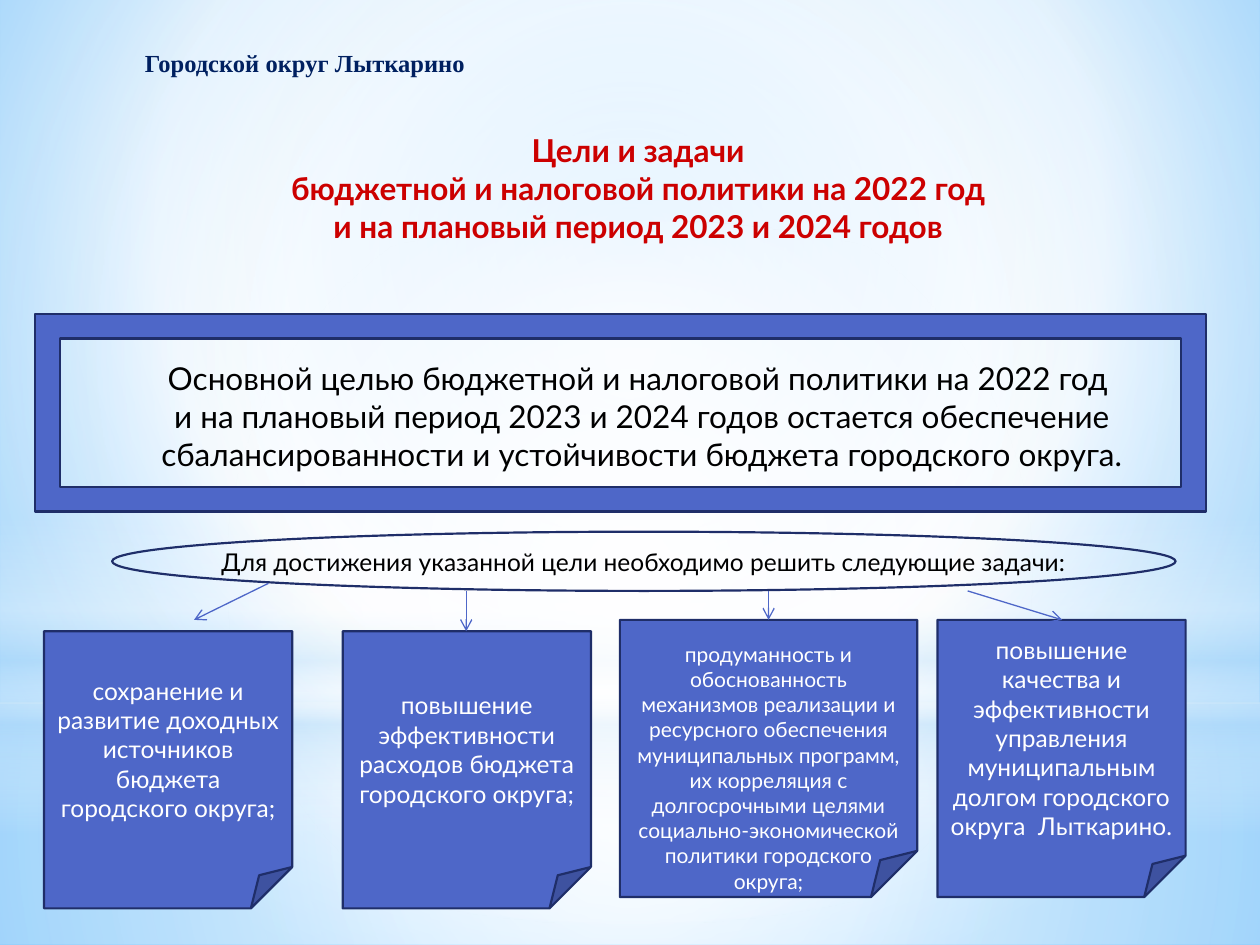
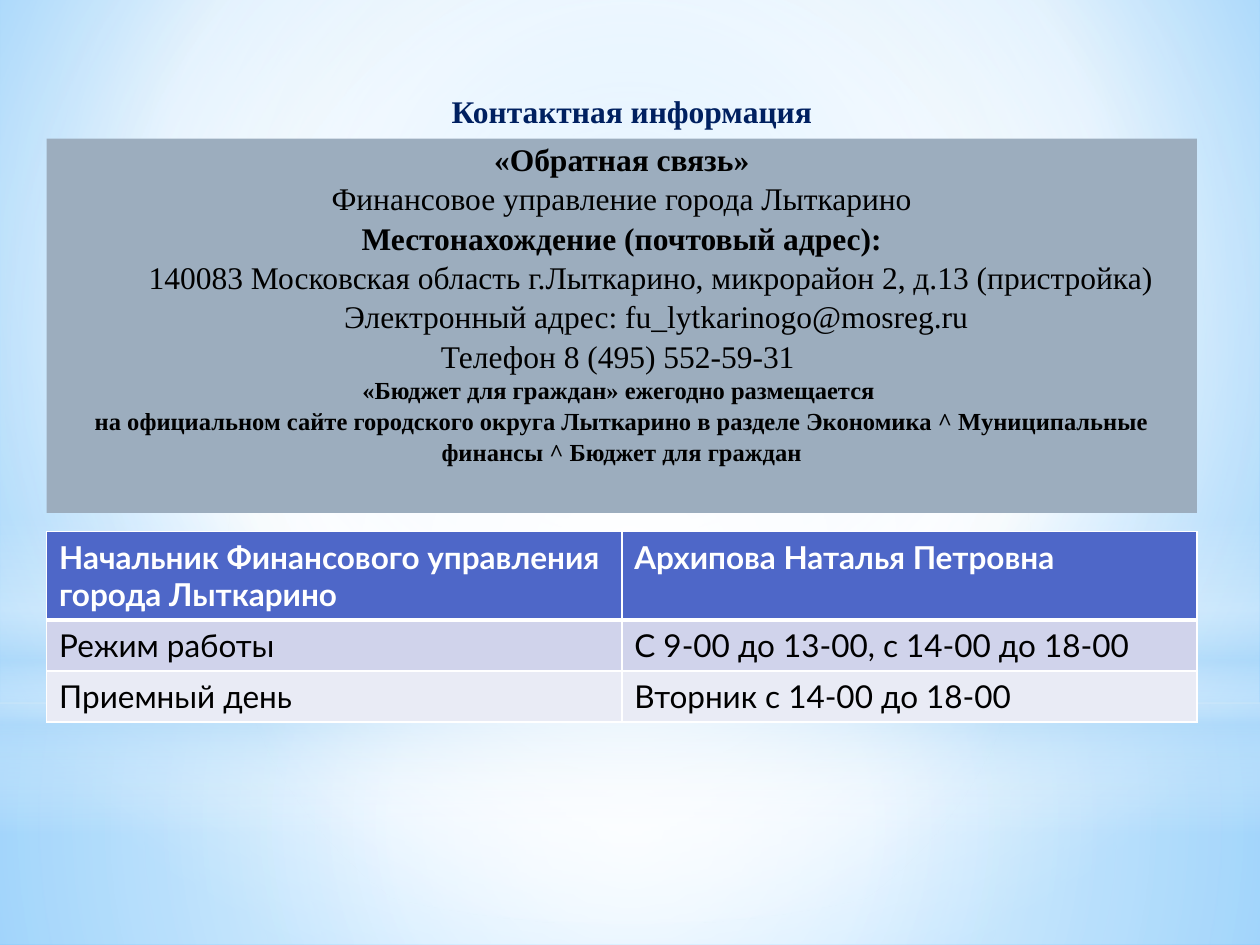
from dataclasses import dataclass

from lxml import etree
from pptx import Presentation
from pptx.dml.color import RGBColor
from pptx.enum.shapes import MSO_CONNECTOR, MSO_SHAPE
from pptx.enum.text import MSO_ANCHOR, MSO_AUTO_SIZE, PP_ALIGN
from pptx.oxml.ns import qn
from pptx.util import Inches, Pt

RECTANGLE, OVAL = MSO_SHAPE.RECTANGLE, MSO_SHAPE.OVAL
FRAME, FOLDED_CORNER = MSO_SHAPE.FRAME, MSO_SHAPE.FOLDED_CORNER
STRAIGHT = MSO_CONNECTOR.STRAIGHT
LEFT, CENTER = PP_ALIGN.LEFT, PP_ALIGN.CENTER
TOP, MIDDLE = MSO_ANCHOR.TOP, MSO_ANCHOR.MIDDLE
NO_AUTOFIT = MSO_AUTO_SIZE.NONE

WHITE = RGBColor(0xFF, 0xFF, 0xFF)
BLACK = RGBColor(0x00, 0x00, 0x00)
RED = RGBColor(0xCC, 0x00, 0x00)
NAVY = RGBColor(0x00, 0x20, 0x60)
BLUE = RGBColor(0x4E, 0x67, 0xC8)
OUTLINE = RGBColor(0x1F, 0x2E, 0x69)
GREY = RGBColor(0x9C, 0xAD, 0xBE)
BAND_DARK = RGBColor(0xD0, 0xD3, 0xEB)
BAND_LIGHT = RGBColor(0xE9, 0xEB, 0xF5)
SKY_LIGHT = RGBColor(0x9E, 0xD5, 0xFF)
SKY_DEEP = RGBColor(0x5B, 0xB9, 0xFF)
HAZE = RGBColor(0xB4, 0xDC, 0xFA)

SLIDE_WIDTH, SLIDE_HEIGHT = Inches(10), Inches(7.5)
COLUMNS, ROWS = 100, 75
COLUMN, ROW = SLIDE_WIDTH // COLUMNS, SLIDE_HEIGHT // ROWS

LATO, TIMES = "Lato", "Times New Roman"
NO_INSETS = dict(margin_left=0, margin_top=0, margin_right=0, margin_bottom=0)
PLAIN = dict(alignment=CENTER, space_before=0, space_after=0, line_spacing=1.0)


@dataclass
class Box:
    left: float
    top: float
    width: float
    height: float

    def inner(self, left, top, width, height):
        return Box(self.left + left, self.top + top, width, height)

    def point(self, x, y):
        return round((self.left + x) * COLUMN), round((self.top + y) * ROW)

    def place(self):
        return (*self.point(0, 0), round(self.width * COLUMN), round(self.height * ROW))


def assign(target, values):
    for name, value in values.items():
        setattr(target, name, value)


def font_of(name, size, color, bold=False):
    return dict(name=name, size=Pt(size), bold=bold), color


def write(paragraph, text, font, layout=PLAIN):
    paragraph.text = text
    assign(paragraph, layout)
    values, color = font
    for run in paragraph.runs:
        assign(run.font, values)
        run.font.color.rgb = color


def write_lines(frame, lines, font, layout=PLAIN):
    for index, line in enumerate(lines):
        paragraph = frame.add_paragraph() if index else frame.paragraphs[0]
        write(paragraph, line, font, layout)


def remove_bullet(paragraph, margin=0, indent=0):
    properties = paragraph._p.get_or_add_pPr()
    properties.set("marL", str(round(margin * COLUMN)))
    properties.set("indent", str(round(indent * COLUMN)))
    etree.SubElement(properties, qn("a:buNone"))


def move_placeholder(placeholder, box, **frame_values):
    left, top, width, height = box.place()
    assign(placeholder, dict(left=left, top=top, width=width, height=height))
    frame = placeholder.text_frame
    assign(frame, dict(auto_size=NO_AUTOFIT, vertical_anchor=TOP, word_wrap=True) | frame_values)
    return frame


def add_figure(slide, kind, box, fill=None, line=None):
    figure = slide.shapes.add_shape(kind, *box.place())
    figure.shadow.inherit = False
    if fill is None:
        figure.fill.background()
    else:
        figure.fill.solid()
        figure.fill.fore_color.rgb = fill
    if line is None:
        figure.line.fill.background()
    else:
        figure.line.color.rgb = line
        figure.line.width = Pt(1.25)
    return figure


def set_gradient(host, fill, stops, center=None):
    fill.gradient()
    gradient = host.find(".//" + qn("a:gradFill"))
    for child in list(gradient):
        gradient.remove(child)
    stop_list = etree.SubElement(gradient, qn("a:gsLst"))
    for position, color, opacity in stops:
        stop = etree.SubElement(stop_list, qn("a:gs"), pos=str(position * 1000))
        tone = etree.SubElement(stop, qn("a:srgbClr"), val=str(color))
        if opacity < 100:
            etree.SubElement(tone, qn("a:alpha"), val=str(opacity * 1000))
    if center is None:
        etree.SubElement(gradient, qn("a:lin"), ang="5400000", scaled="0")
    else:
        circle = etree.SubElement(gradient, qn("a:path"), path="circle")
        edges = {side: str(share * 1000) for side, share in zip("ltrb", center)}
        etree.SubElement(circle, qn("a:fillToRect"), **edges)


def build_backdrop(master, slide, box):
    sky = [(0, SKY_LIGHT, 100), (60, WHITE, 100), (100, SKY_DEEP, 100)]
    set_gradient(master.element, master.background.fill, sky, (20, 10, 20, 60))
    middle = (50, 50, 50, 50)
    layers = [
        (RECTANGLE, 55.8, 19.2, [(0, WHITE, 91), (37, WHITE, 76), (100, HAZE, 79)], middle),
        (RECTANGLE, 0, 55.8, [(0, WHITE, 89), (48, WHITE, 62), (100, HAZE, 79)], middle),
        (RECTANGLE, 41.2, 25, [(0, WHITE, 0), (29, WHITE, 30), (45, HAZE, 40),
                               (55, WHITE, 26), (65, HAZE, 60), (100, WHITE, 0)], None),
        (OVAL, 17.5, 55.8, [(0, WHITE, 100), (56, WHITE, 0)], middle),
    ]
    tree = master.shapes.element
    for index, (kind, top, height, stops, center) in enumerate(layers):
        layer = add_figure(slide, kind, box.inner(0, top, box.width, height))
        set_gradient(layer.element, layer.fill, stops, center)
        layer.element.nvSpPr.cNvPr.set("id", str(100 + index))
        tree.insert(2 + index, layer.element)


def add_arrow(slide, start, end):
    arrow = slide.shapes.add_connector(STRAIGHT, *start, *end)
    arrow.line.color.rgb = BLUE
    arrow.line.width = Pt(0.75)
    properties = arrow.element.spPr
    etree.SubElement(properties.find(qn("a:ln")), qn("a:tailEnd"), type="arrow")
    etree.SubElement(properties, qn("a:effectLst"))


def build_district(slide, box):
    frame = slide.shapes.add_textbox(*box.place()).text_frame
    assign(frame, NO_INSETS | dict(word_wrap=False))
    write(frame.paragraphs[0], "Городской округ Лыткарино",
          font_of(TIMES, 14, NAVY, True), PLAIN | dict(alignment=LEFT))


def build_goal(slide, box):
    add_figure(slide, FRAME, box, BLUE, OUTLINE)
    goal = move_placeholder(slide.placeholders[1], box.inner(2.5, 3.1, 91.3, 10))
    write(goal.paragraphs[0],
          "Основной целью бюджетной и налоговой политики на 2022 год \v"
          "и на плановый период 2023 и 2024 годов остается обеспечение "
          "сбалансированности и устойчивости бюджета городского округа.",
          font_of(LATO, 18, BLACK))
    remove_bullet(goal.paragraphs[0])


def build_tasks(slide, box):
    lead = add_figure(slide, OVAL, box.inner(5.4, 0, 84.4, 4.7), line=OUTLINE)
    assign(lead.text_frame, NO_INSETS | dict(word_wrap=False, vertical_anchor=MIDDLE))
    write(lead.text_frame.paragraphs[0],
          "Для достижения указанной цели необходимо решить следующие задачи:",
          font_of(LATO, 14, BLACK))
    high, low, wide, narrow = 7, 7.9, 23.6, 19.7
    centered = dict(vertical_anchor=MIDDLE)
    from_top = dict(vertical_anchor=TOP, margin_top=round(1.7 * ROW))
    tasks = [
        (0, low, narrow, 14, centered,
         "сохранение и развитие доходных источников бюджета городского округа;"),
        (23.7, low, narrow, 14, centered,
         "повышение эффективности расходов бюджета городского округа;"),
        (45.7, high, wide, 12, from_top,
         "продуманность и обоснованность механизмов реализации и ресурсного обеспечения "
         "муниципальных программ, их корреляция с долгосрочными целями "
         "социально-экономической политики городского округа;"),
        (70.9, high, narrow, 14, centered,
         "повышение качества и эффективности управления муниципальным долгом "
         "городского округа  Лыткарино."),
    ]
    for left, top, width, size, anchoring, text in tasks:
        card = add_figure(slide, FOLDED_CORNER, box.inner(left, top, width, 22), BLUE, OUTLINE)
        assign(card.text_frame, dict(word_wrap=True) | anchoring)
        write(card.text_frame.paragraphs[0], text, font_of(LATO, size, WHITE))
    arrows = [((17.8, 4.1), (11.9, high)), ((33.5, 4.7), (33.5, low)),
              ((57.5, 4.7), (57.5, high)), ((73.3, 4.7), (80.8, high))]
    for start, end in arrows:
        add_arrow(slide, box.point(*start), box.point(*end))


def build_goals_slide(slide):
    title = move_placeholder(slide.shapes.title, Box(5.3, 9.9, 91.3, 10))
    write_lines(title, ["Цели и задачи ",
                        "бюджетной и налоговой политики на 2022 год ",
                        "и на плановый период 2023 и 2024 годов "],
                font_of(LATO, 18, RED, True))
    build_district(slide, Box(11.5, 3.8, 72.1, 1.9))
    build_goal(slide, Box(2.8, 24.9, 92.9, 15.7))
    build_tasks(slide, Box(3.5, 42.2, 90.6, 29.9))


def build_address(slide, box):
    panel = slide.placeholders[1]
    panel.fill.solid()
    panel.fill.fore_color.rgb = GREY
    frame = move_placeholder(panel, box, **NO_INSETS)
    lines = [
        ("«Обратная связь»", 18, True, CENTER, 0, 0),
        ("Финансовое управление города Лыткарино", 18, False, CENTER, 0, 0),
        ("Местонахождение (почтовый адрес):", 18, True, CENTER, 0, 0),
        ("140083 Московская область г.Лыткарино, микрорайон 2, д.13 (пристройка)",
         18, False, LEFT, 6.4, 1.7),
        ("Электронный адрес: fu_lytkarinogo@mosreg.ru", 18, False, CENTER, 3.8, 1.7),
        ("Телефон 8 (495) 552-59-31 ", 18, False, CENTER, 0, 0),
        ("«Бюджет для граждан» ежегодно размещается ", 14, True, CENTER, 0, 0),
        ("на официальном сайте городского округа Лыткарино в разделе Экономика ^ "
         "Муниципальные финансы ^ Бюджет для граждан", 14, True, CENTER, 0, 0),
    ]
    for index, (text, size, bold, alignment, margin, indent) in enumerate(lines):
        paragraph = frame.add_paragraph() if index else frame.paragraphs[0]
        write(paragraph, text, font_of(TIMES, size, BLACK, bold),
              PLAIN | dict(alignment=alignment, line_spacing=1.04))
        remove_bullet(paragraph, margin, indent)


def set_borders(cell, bottom):
    properties = cell._tc.get_or_add_tcPr()
    for side, width in dict(lnL=1, lnR=1, lnT=1, lnB=bottom).items():
        border = etree.SubElement(properties, qn("a:" + side), w=str(Pt(width)))
        fill = etree.SubElement(border, qn("a:solidFill"))
        etree.SubElement(fill, qn("a:srgbClr"), val=str(WHITE))


def build_reception(slide, box):
    rows = [
        (7, BLUE, WHITE, True, 3,
         ("Начальник Финансового управления города Лыткарино", "Архипова Наталья Петровна")),
        (4.05, BAND_DARK, BLACK, False, 1, ("Режим работы", "С 9-00 до 13-00, с 14-00 до 18-00")),
        (4.05, BAND_LIGHT, BLACK, False, 1, ("Приемный день", "Вторник с 14-00 до 18-00")),
    ]
    table = slide.shapes.add_table(len(rows), 2, *box.place()).table
    for row, (height, fill, color, bold, bottom, texts) in zip(table.rows, rows):
        row.height = round(height * ROW)
        for cell, text in zip(row.cells, texts):
            set_borders(cell, bottom)
            cell.fill.solid()
            cell.fill.fore_color.rgb = fill
            write(cell.text_frame.paragraphs[0], text, font_of(LATO, 18, color, bold),
                  PLAIN | dict(alignment=LEFT))


def build_contacts_slide(slide):
    title = move_placeholder(slide.shapes.title, Box(34.7, 6.8, 30.9, 4), word_wrap=False)
    write(title.paragraphs[0], "Контактная информация", font_of(TIMES, 18, NAVY, True))
    build_address(slide, Box(3.7, 11, 91.3, 29.7))
    build_reception(slide, Box(3.7, 42.2, 91.3, 15.1))


def main():
    deck = Presentation()
    assign(deck, dict(slide_width=SLIDE_WIDTH, slide_height=SLIDE_HEIGHT))
    layout = deck.slide_layouts[1]
    goals, contacts = (deck.slides.add_slide(layout) for _ in range(2))
    build_backdrop(deck.slide_master, goals, Box(0, 0, COLUMNS, ROWS))
    build_goals_slide(goals)
    build_contacts_slide(contacts)
    deck.save("out.pptx")


if __name__ == "__main__":
    main()
